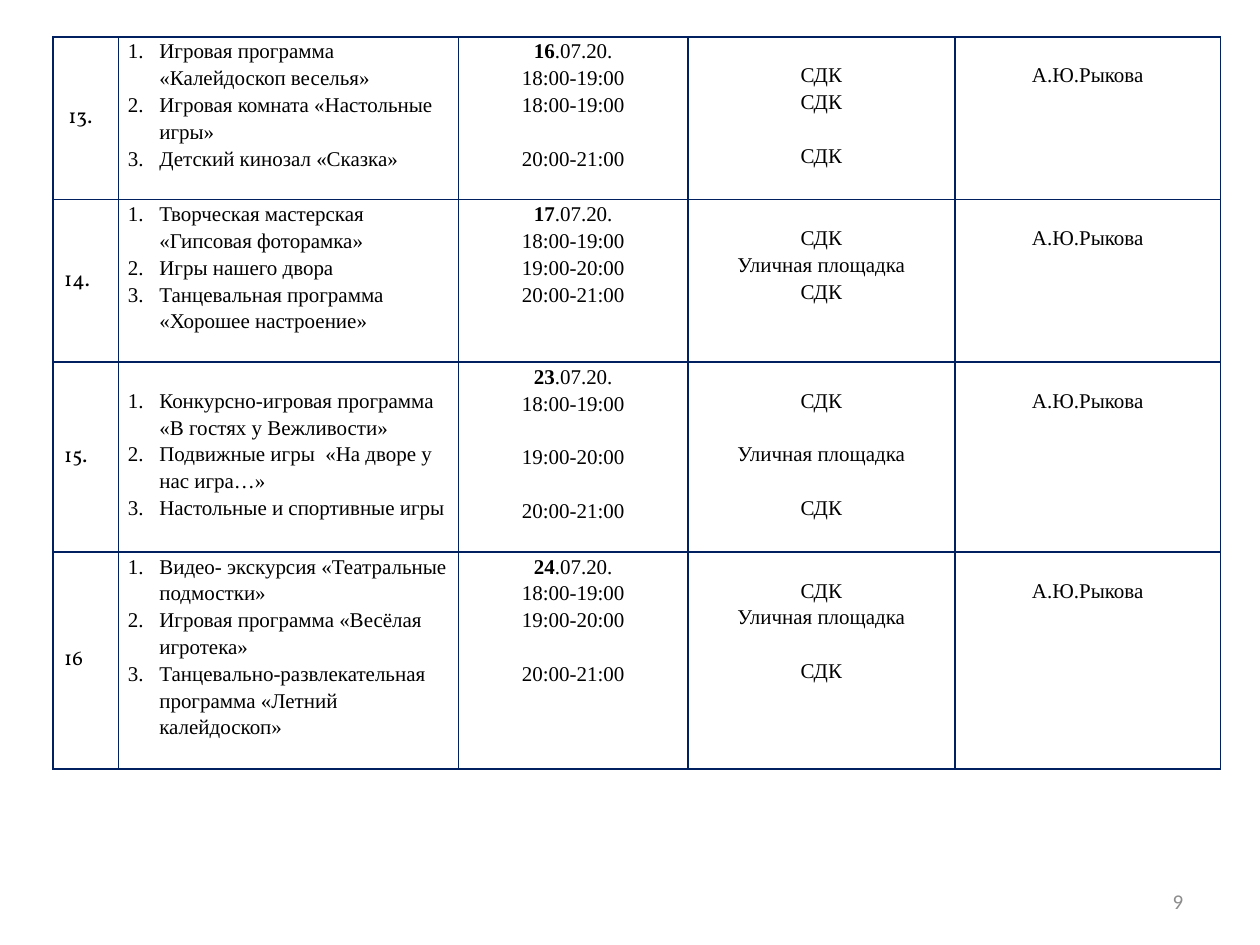
from dataclasses import dataclass

import pptx
import pptx.dml.color
import pptx.enum.text
import pptx.oxml
import pptx.oxml.ns
import pptx.util

Pt = pptx.util.Pt
Align = pptx.enum.text.PP_ALIGN
Anchor = pptx.enum.text.MSO_ANCHOR


@dataclass(frozen=True)
class Theme:
    text: str = "000000"
    muted: str = "8C8C8C"
    border: str = "002060"
    cell: str = "FFFFFF"
    body_font: str = "Times New Roman"
    number_font: str = "Vollkorn"
    page_font: str = "Calibri"
    size: float = 12
    border_width: float = 1
    line_spacing: float = 1.15
    first_gap: float = 13.7
    line_gap: float = 15.3
    list_indent: float = 18


COLUMN_WIDTHS = [37.5, 194.4, 131, 152.6, 151.9]
ROW_HEIGHTS = [93, 93, 108.5, 124]
LEADER = "А.Ю.Рыкова"
CLUB = "СДК"
YARD = "Уличная площадка"

# Number, activities, day, times, places; None leaves one line free.
SCHEDULE = [
    (" 13.",
     ["Игровая программа «Калейдоскоп веселья»",
      "Игровая комната «Настольные игры»",
      "Детский кинозал «Сказка»"],
     "16", ["18:00-19:00", "18:00-19:00", None, "20:00-21:00"],
     [CLUB, CLUB, None, CLUB]),
    ("14.",
     ["Творческая мастерская «Гипсовая фоторамка»",
      "Игры нашего двора",
      "Танцевальная программа «Хорошее настроение»"],
     "17", ["18:00-19:00", "19:00-20:00", "20:00-21:00"],
     [CLUB, YARD, CLUB]),
    ("15.",
     [None,
      "Конкурсно-игровая программа «В гостях у Вежливости»",
      "Подвижные игры  «На дворе у нас игра…»",
      "Настольные и спортивные игры"],
     "23", ["18:00-19:00", None, "19:00-20:00", None, "20:00-21:00"],
     [CLUB, None, YARD, None, CLUB]),
    ("16",
     ["Видео- экскурсия «Театральные подмостки»",
      "Игровая программа «Весёлая игротека»",
      "Танцевально-развлекательная программа «Летний калейдоскоп»"],
     "24", ["18:00-19:00", "19:00-20:00", None, "20:00-21:00"],
     [CLUB, YARD, None, CLUB]),
]


class SlideBuilder:
    def __init__(self, slide, theme):
        self.slide = slide
        self.theme = theme

    def add_run(self, paragraph, text, font, color=None, bold=False):
        run = paragraph.add_run()
        run.text = text
        run.font.name = font
        run.font.size = Pt(self.theme.size)
        run.font.bold = bold
        run.font.color.rgb = pptx.dml.color.RGBColor.from_string(color or self.theme.text)

    def add_page_number(self, text, left, top, width, height):
        frame = self.slide.shapes.add_textbox(Pt(left), Pt(top), Pt(width), Pt(height)).text_frame
        frame.word_wrap = True
        frame.vertical_anchor = Anchor.MIDDLE
        frame.margin_left = frame.margin_right = Pt(7.9)
        frame.margin_top = frame.margin_bottom = Pt(4)
        paragraph = frame.paragraphs[0]
        paragraph.alignment = Align.RIGHT
        self.add_run(paragraph, text, self.theme.page_font, self.theme.muted)

    def add_table(self, left, top, widths, heights):
        table = self.slide.shapes.add_table(
            len(heights), len(widths), Pt(left), Pt(top),
            Pt(sum(widths)), Pt(sum(heights))).table
        table.first_row = table.horz_banding = False
        for column, width in zip(table.columns, widths):
            column.width = Pt(width)
        for row, height in zip(table.rows, heights):
            row.height = Pt(height)
        for cell in table.iter_cells():
            self.style_cell(cell)
        return table

    def style_cell(self, cell):
        properties = cell._tc.get_or_add_tcPr()
        for side in ("lnL", "lnR", "lnT", "lnB"):
            properties.append(pptx.oxml.parse_xml(
                f'<a:{side} {pptx.oxml.ns.nsdecls("a")} w="{Pt(self.theme.border_width)}">'
                f'<a:solidFill><a:srgbClr val="{self.theme.border}"/></a:solidFill></a:{side}>'))
        cell.fill.solid()
        cell.fill.fore_color.rgb = pptx.dml.color.RGBColor.from_string(self.theme.cell)
        cell.margin_left = cell.margin_right = Pt(5.4)
        cell.margin_top = cell.margin_bottom = 0

    def fill_number(self, cell, text):
        cell.vertical_anchor = Anchor.MIDDLE
        cell.margin_left = cell.margin_right = Pt(6.5)
        cell.margin_top = cell.margin_bottom = Pt(3)
        self.add_run(cell.text_frame.paragraphs[0], text, self.theme.number_font)

    def fill_lines(self, cell, lines, numbered=False):
        """Write one paragraph per line; None becomes space above the next line.

        A line given as a pair has its first part in bold.
        """
        paragraph = None
        gap = 0
        for line in lines:
            if line is None:
                gap += 1
                continue
            if paragraph is None:
                paragraph = cell.text_frame.paragraphs[0]
                cell.margin_top = Pt(gap * self.theme.first_gap)
            else:
                paragraph = cell.text_frame.add_paragraph()
                paragraph.space_before = Pt(gap * self.theme.line_gap)
            gap = 0
            paragraph.line_spacing = self.theme.line_spacing
            if numbered:
                self.number_paragraph(paragraph)
            else:
                paragraph.alignment = Align.CENTER
            if isinstance(line, tuple):
                bold_part, line = line
                self.add_run(paragraph, bold_part, self.theme.body_font, bold=True)
            self.add_run(paragraph, line, self.theme.body_font)

    def number_paragraph(self, paragraph):
        properties = paragraph._p.get_or_add_pPr()
        indent = Pt(self.theme.list_indent)
        properties.set("marL", str(indent))
        properties.set("indent", str(-indent))
        properties.append(pptx.oxml.parse_xml(
            f'<a:buFont {pptx.oxml.ns.nsdecls("a")} typeface="+mj-lt"/>'))
        properties.append(pptx.oxml.parse_xml(
            f'<a:buAutoNum {pptx.oxml.ns.nsdecls("a")} type="arabicPeriod"/>'))


def main():
    presentation = pptx.Presentation()
    presentation.slide_width, presentation.slide_height = Pt(720), Pt(540)
    blank_layout = presentation.slide_layouts[6]
    builder = SlideBuilder(presentation.slides.add_slide(blank_layout), Theme())

    builder.add_page_number("9", 516, 500.5, 168, 28.8)
    table = builder.add_table(30.2, 21, COLUMN_WIDTHS, ROW_HEIGHTS)
    for row, (number, activities, day, times, places) in zip(table.rows, SCHEDULE):
        number_cell, activity_cell, time_cell, place_cell, leader_cell = row.cells
        builder.fill_number(number_cell, number)
        builder.fill_lines(activity_cell, activities, numbered=True)
        builder.fill_lines(time_cell, [(day, ".07.20."), *times])
        builder.fill_lines(place_cell, [None, *places])
        builder.fill_lines(leader_cell, [None, LEADER])

    presentation.save("out.pptx")


if __name__ == "__main__":
    main()
